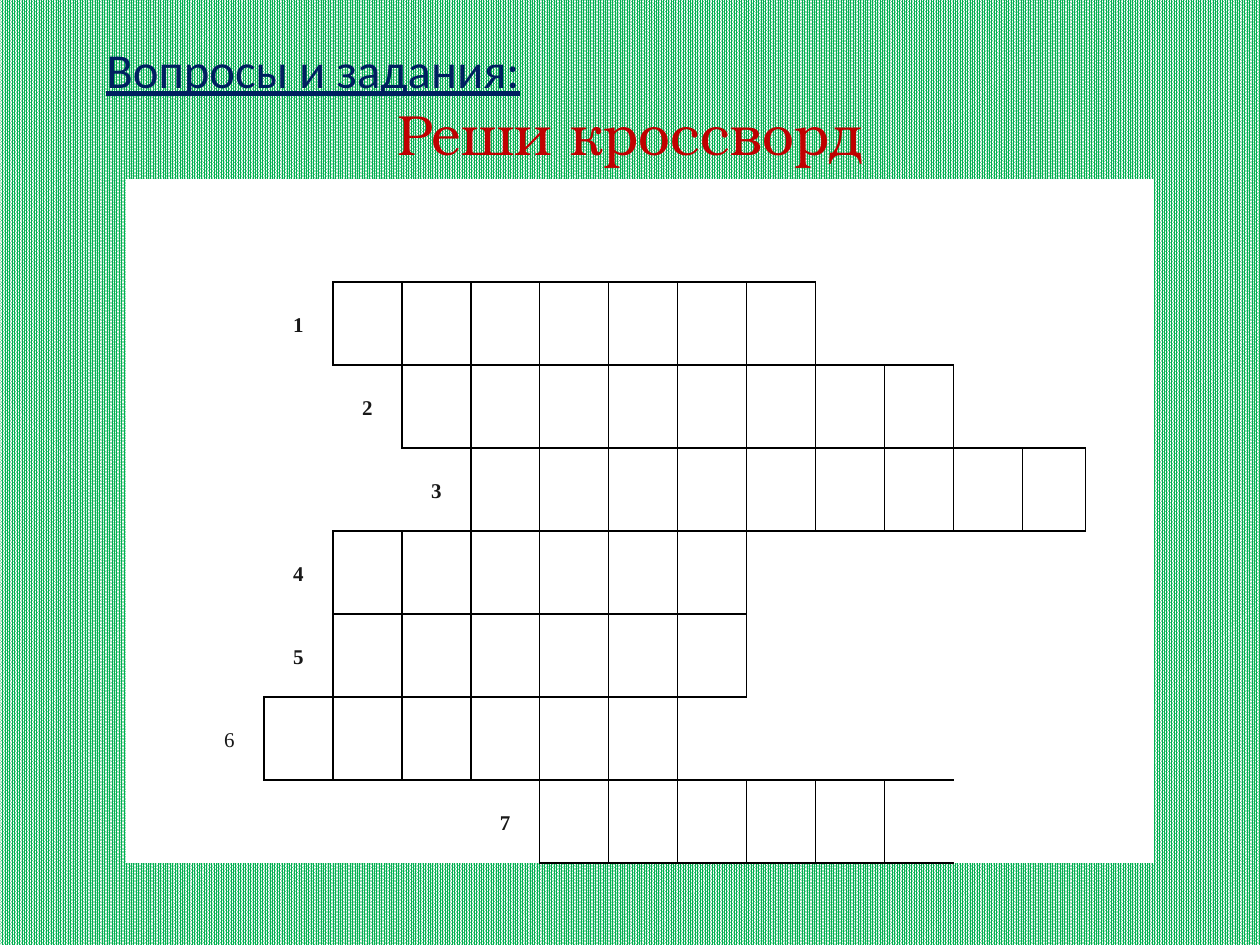
from dataclasses import dataclass

from lxml import etree
from pptx import Presentation
from pptx import util as u
from pptx.dml.color import RGBColor
from pptx.enum import dml, text
from pptx.oxml.ns import qn

PX = 914400 / 126


def px(length):
    return u.Emu(round(length * PX))


@dataclass(frozen=True)
class Theme:
    green: str = "00B050"
    white: str = "FFFFFF"
    navy: str = "002060"
    red: str = "C00000"
    ink: str = "181818"
    line: str = "000000"
    heading_font: str = "Calibri"
    subtitle_font: str = "TeX Gyre Bonum"
    number_font: str = "Times New Roman"
    heading_size: float = 27.9
    subtitle_size: float = 32.4
    number_size: int = 12
    line_width: int = 1


@dataclass(frozen=True)
class Word:
    number: str
    row: int
    first: int
    length: int
    bold: bool = True


WORDS = [
    Word("1", 1, 3, 7),
    Word("2", 2, 4, 8),
    Word("3", 3, 5, 9),
    Word("4", 4, 3, 6),
    Word("5", 5, 3, 6),
    Word("6", 6, 2, 6, bold=False),
    Word("7", 7, 6, 6),
]
COLUMNS = [69] * 13 + [63, 69]
ROWS = [103] + [83] * 7
MERGES = [((0, 12), (0, 14)), ((6, 12), (7, 12))]
SIDES = {"a:lnL": (0, -1), "a:lnR": (0, 1), "a:lnT": (-1, 0), "a:lnB": (1, 0)}


class SlideBuilder:
    def __init__(self, slide, theme):
        self.slide = slide
        self.theme = theme

    def background(self):
        fill = self.slide.background.fill
        fill.patterned()
        fill.pattern = dml.MSO_PATTERN.PERCENT_90
        fill.fore_color.rgb = RGBColor.from_string(self.theme.green)
        fill.back_color.rgb = RGBColor.from_string(self.theme.white)

    def add_span(self, para, words, color, **format_values):
        span = para.add_run()
        span.text = words
        for name, value in format_values.items():
            setattr(span.font, name, value)
        span.font.color.rgb = RGBColor.from_string(color)

    def title(self, left, top, width, height, lines):
        """Each line is (words, indent in px, colour, font values)."""
        box = self.slide.shapes.add_textbox(*map(px, (left, top, width, height)))
        frame = box.text_frame
        frame_values = {
            "word_wrap": True,
            "vertical_anchor": text.MSO_ANCHOR.MIDDLE,
            "margin_bottom": px(76),  # lifts both lines above the grid
        }
        for name, value in frame_values.items():
            setattr(frame, name, value)
        for index, (words, indent, color, values) in enumerate(lines):
            para = frame.add_paragraph() if index else frame.paragraphs[0]
            para.alignment = text.PP_ALIGN.LEFT
            if indent:
                properties = para._p.get_or_add_pPr()
                properties.set("marL", str(px(indent)))
                properties.set("indent", "0")
            self.add_span(para, words, color, **values)

    def border(self, cell, side, visible):
        line = etree.SubElement(cell._tc.get_or_add_tcPr(), qn(side))
        line.set("w", str(u.Pt(self.theme.line_width)))
        if visible:
            fill = etree.SubElement(line, qn("a:solidFill"))
            etree.SubElement(fill, qn("a:srgbClr")).set("val", self.theme.line)
        else:
            etree.SubElement(line, qn("a:noFill"))

    def number(self, cell, word):
        cell_values = {
            "vertical_anchor": text.MSO_ANCHOR.MIDDLE,
            "margin_left": px(9),
            "margin_right": px(9),
            "margin_top": 0,
            "margin_bottom": 0,
        }
        for name, value in cell_values.items():
            setattr(cell, name, value)
        para = cell.text_frame.paragraphs[0]
        para.alignment = text.PP_ALIGN.CENTER
        para.line_spacing = 1.15
        self.add_span(para, word.number, self.theme.ink, bold=word.bold,
                      name=self.theme.number_font,
                      size=u.Pt(self.theme.number_size))

    def crossword(self, left, top, words):
        """Outline every letter square; the number stands left of its word."""
        table = self.slide.shapes.add_table(
            len(ROWS), len(COLUMNS), px(left), px(top),
            px(sum(COLUMNS)), px(sum(ROWS))).table
        table.first_row = table.horz_banding = False
        for column, width in zip(table.columns, COLUMNS):
            column.width = px(width)
        for row, height in zip(table.rows, ROWS):
            row.height = px(height)
        for start, end in MERGES:
            table.cell(*start).merge(table.cell(*end))

        squares = {(word.row, word.first + step)
                   for word in words for step in range(word.length)}
        for row in range(len(ROWS)):
            for column in range(len(COLUMNS)):
                cell = table.cell(row, column)
                for side, (down, across) in SIDES.items():
                    pair = {(row, column), (row + down, column + across)}
                    visible = bool(pair & squares) and not cell.is_spanned
                    self.border(cell, side, visible)
                cell.fill.solid()
                cell.fill.fore_color.rgb = RGBColor.from_string(self.theme.white)
        for word in words:
            self.number(table.cell(word.row, word.first - 1), word)


def main():
    deck = Presentation()
    deck.slide_width, deck.slide_height = px(1260), px(945)
    theme = Theme()
    page = SlideBuilder(deck.slides.add_slide(deck.slide_layouts[6]), theme)
    page.background()
    page.title(94, 94, 1134, 88, [
        ("Вопросы и задания:", 0, theme.navy,
         {"name": theme.heading_font, "size": u.Pt(theme.heading_size),
          "underline": True}),
        ("Реши кроссворд", 291, theme.red,
         {"name": theme.subtitle_font, "size": u.Pt(theme.subtitle_size)}),
    ])
    page.crossword(126, 179, WORDS)
    deck.save("out.pptx")


if __name__ == "__main__":
    main()
